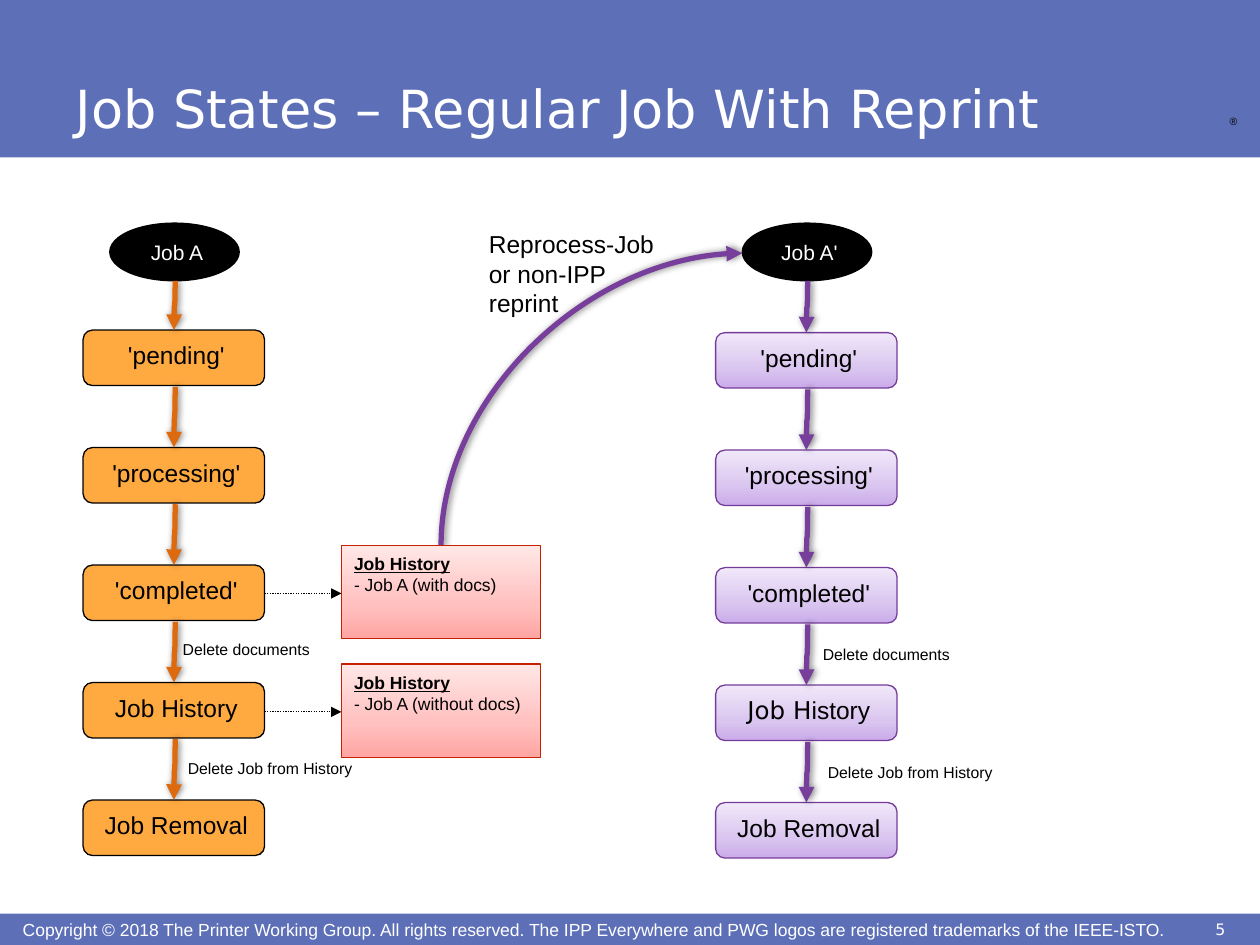
from lxml import etree
from pptx import Presentation
from pptx.dml.color import RGBColor
from pptx.enum.dml import MSO_LINE
from pptx.enum.shapes import MSO_CONNECTOR, MSO_SHAPE
from pptx.enum.text import MSO_ANCHOR, MSO_AUTO_SIZE, PP_ALIGN
from pptx.oxml import parse_xml
from pptx.oxml.ns import qn
from pptx.util import Inches, Pt

COLORS = {
    "band": "5D6FB7", "white": "FFFFFF", "black": "000000",
    "orange": "FFA941", "orange_arrow": "DE6A10",
    "purple_line": "753B9A", "purple_arrow": "773F9B", "red_line": "C82101",
}
# Stops run from the bottom edge to the top edge
GRADIENTS = {
    "purple": {0: "CAABEA", 35: "D9C5EF", 100: "F1E8FA"},
    "red": {0: "FFA5A3", 35: "FFC0BE", 100: "FFE7E6"},
}
A_NS = 'xmlns:a="http://schemas.openxmlformats.org/drawingml/2006/main"'
STEPS = ["'pending'", "'processing'", "'completed'", "Job History", "Job Removal"]
STEP_W, STEP_H, STEP_PITCH = 1.44, 0.44, (6.35 - 2.62) / 4


def rgb(name):
    return RGBColor.from_string(COLORS[name])


def write(box, paragraphs, size, color="black", font="Arial", align=PP_ALIGN.LEFT,
          anchor=MSO_ANCHOR.TOP, inset=0.06, indent=0.04, wrap=True):
    """Fill a shape with paragraphs, each a list of (text, font overrides) runs."""
    frame = box.text_frame
    frame_format = {"word_wrap": wrap, "vertical_anchor": anchor}
    for side in ("left", "right", "top", "bottom"):
        frame_format[f"margin_{side}"] = Inches(inset)
    if not wrap:
        frame_format["auto_size"] = MSO_AUTO_SIZE.SHAPE_TO_FIT_TEXT
    for key, value in frame_format.items():
        setattr(frame, key, value)
    for index, runs in enumerate(paragraphs):
        paragraph = frame.add_paragraph() if index else frame.paragraphs[0]
        paragraph.alignment = align
        paragraph._p.get_or_add_pPr().set("marL", str(Inches(indent)))
        for text, overrides in runs:
            run = paragraph.add_run()
            run.text = text
            run.font.color.rgb = rgb(color)
            for key, value in {"size": Pt(size), "name": font, **overrides}.items():
                setattr(run.font, key, value)


def add_text(slide, box, lines, size, **text_format):
    textbox = slide.shapes.add_textbox(*map(Inches, box))
    write(textbox, [[(line, {})] for line in lines], size, **text_format)


def add_panel(slide, kind, box, fill, outline=None, weight=0.75):
    panel = slide.shapes.add_shape(kind, *map(Inches, box))
    panel.shadow.inherit = False
    if fill in GRADIENTS:
        stops = "".join(f'<a:gs pos="{pos * 1000}"><a:srgbClr val="{value}"/></a:gs>'
                        for pos, value in GRADIENTS[fill].items())
        panel._element.spPr.insert(2, parse_xml(
            f'<a:gradFill {A_NS} rotWithShape="1"><a:gsLst>{stops}</a:gsLst>'
            '<a:lin ang="16200000" scaled="0"/></a:gradFill>'))
    else:
        panel.fill.solid()
        panel.fill.fore_color.rgb = rgb(fill)
    if outline:
        panel.line.color.rgb = rgb(outline)
        panel.line.width = Pt(weight)
    else:
        panel.line.fill.background()
    return panel


def add_arrow(slide, kind, start, end, color, weight, dash=None):
    arrow = slide.shapes.add_connector(kind, *map(Inches, (*start, *end)))
    arrow.line.color.rgb = rgb(color)
    arrow.line.width = Pt(weight)
    if dash:
        arrow.line.dash_style = dash
    etree.SubElement(arrow.line._get_or_add_ln(), qn("a:tailEnd")).set("type", "triangle")
    effects = etree.SubElement(arrow._element.spPr, qn("a:effectLst"))
    return arrow, effects


def add_curve(slide, start, end, color, preset="curvedConnector3"):
    """Shadowed curve that leaves start vertically, by turning a connector 90 degrees."""
    mid_x, mid_y = (start[0] + end[0]) / 2, (start[1] + end[1]) / 2
    dx, dy = start[0] - mid_x, start[1] - mid_y
    arrow, effects = add_arrow(slide, MSO_CONNECTOR.CURVE, (mid_x + dy, mid_y - dx),
                               (mid_x - dy, mid_y + dx), color, 3)
    properties = arrow._element.spPr
    properties.find(qn("a:xfrm")).set("rot", "5400000")
    properties.find(qn("a:prstGeom")).set("prst", preset)
    effects.append(parse_xml(
        f'<a:outerShdw {A_NS} blurRad="{Pt(4)}" dist="{Pt(1)}" dir="0" rotWithShape="0">'
        f'<a:srgbClr val="{COLORS["black"]}"><a:alpha val="50000"/></a:srgbClr>'
        '</a:outerShdw>'))


def build_frame(slide, width, height):
    """Header and footer bands with their text."""
    for band in ((0, height - 0.25, width, 0.25), (0, 0, width, 1.25)):
        add_panel(slide, MSO_SHAPE.RECTANGLE, band, "band")
    add_text(slide, (9.64, 0.86, 0.27, 0.19), ["®"], 6, indent=0.06, wrap=False)
    add_text(slide, (0.14, height - 0.21, 9.35, 0.17),
             ["Copyright © 2018 The Printer Working Group. All rights reserved. The IPP "
              "Everywhere and PWG logos are registered trademarks of the IEEE-ISTO."],
             10, color="white", anchor=MSO_ANCHOR.MIDDLE, inset=0)
    add_text(slide, (0.5, 0.05, 8.28, 1.11), ["Job States – Regular Job With Reprint"], 30,
             color="white", font="DejaVu Sans", anchor=MSO_ANCHOR.BOTTOM)
    add_text(slide, (width - 0.63, height - 0.25, 0.63, 0.25), ["5"], 9, color="white",
             font="DejaVu Sans", align=PP_ALIGN.CENTER, inset=0.05, indent=0)


def build_job_column(slide, left, top, job, first_step, fill, outline, arrow,
                     delete_labels, mixed_fonts=False):
    start = add_panel(slide, MSO_SHAPE.OVAL, (left + 0.22, top, 1.01, 0.44),
                      "black", "black", 2)
    write(start, [[(job, {})]], 12, color="white", align=PP_ALIGN.CENTER,
          anchor=MSO_ANCHOR.MIDDLE)
    previous_bottom = top + 0.45
    for index, state in enumerate(STEPS):
        step_top = top + first_step + index * STEP_PITCH
        step = add_panel(slide, MSO_SHAPE.ROUNDED_RECTANGLE,
                         (left, step_top, STEP_W, STEP_H), fill, outline)
        runs = [(state, {})]
        if mixed_fonts and state == "Job History":
            runs = [(state[:5], {"name": "DejaVu Sans"}), (state[5:], {})]
        write(step, [runs], 14, align=PP_ALIGN.CENTER)
        add_curve(slide, (left + 0.73, previous_bottom), (left + 0.72, step_top), arrow)
        previous_bottom = step_top + STEP_H + 0.01
    for text, x, y, width in delete_labels:
        add_text(slide, (left + x, top + y, width, 0.26), [text], 9,
                 anchor=MSO_ANCHOR.MIDDLE, wrap=False)


def build_history(slide, left, top, entry):
    """History card with the dotted arrow that leads to it."""
    width, height = 1.58, 0.74
    card = add_panel(slide, MSO_SHAPE.RECTANGLE, (left, top, width, height),
                     "red", "red_line")
    write(card, [[("Job History", {"bold": True, "underline": True})], [(entry, {})]], 10)
    arrow_y = top + height / 2 + 0.01
    add_arrow(slide, MSO_CONNECTOR.STRAIGHT, (left - 0.61, arrow_y), (left, arrow_y),
              "black", 0.75, MSO_LINE.ROUND_DOT)


def build_reprint_link(slide, start, end):
    add_curve(slide, start, end, "purple_arrow", "curvedConnector2")
    add_text(slide, (start[0] + 0.28, end[1] - 0.25, 1.52, 0.82),
             ["Reprocess-Job", "or non-IPP", "reprint"], 14,
             anchor=MSO_ANCHOR.MIDDLE, wrap=False)


def main():
    deck = Presentation()
    deck.slide_width, deck.slide_height = Inches(10), Inches(7.5)
    slide = deck.slides.add_slide(deck.slide_layouts[6])
    build_frame(slide, 10, 7.5)
    build_job_column(slide, 0.66, 1.78, "Job A", 0.84, "orange", "black", "orange_arrow",
                     [("Delete documents", 0.69, 3.24, 1.22),
                      ("Delete Job from History", 0.73, 4.19, 1.52)])
    build_reprint_link(slide, (3.5, 4.33), (5.89, 2.01))
    build_job_column(slide, 5.68, 1.78, "Job A'", 0.86, "purple", "purple_line",
                     "purple_arrow",
                     [("Delete documents", 0.75, 3.28, 1.22),
                      ("Delete Job from History", 0.79, 4.22, 1.52)], mixed_fonts=True)
    for index, entry in enumerate(("- Job A (with docs)", "- Job A (without docs)")):
        build_history(slide, 2.71, 4.33 + index * 0.94, entry)
    deck.save("out.pptx")


if __name__ == "__main__":
    main()
